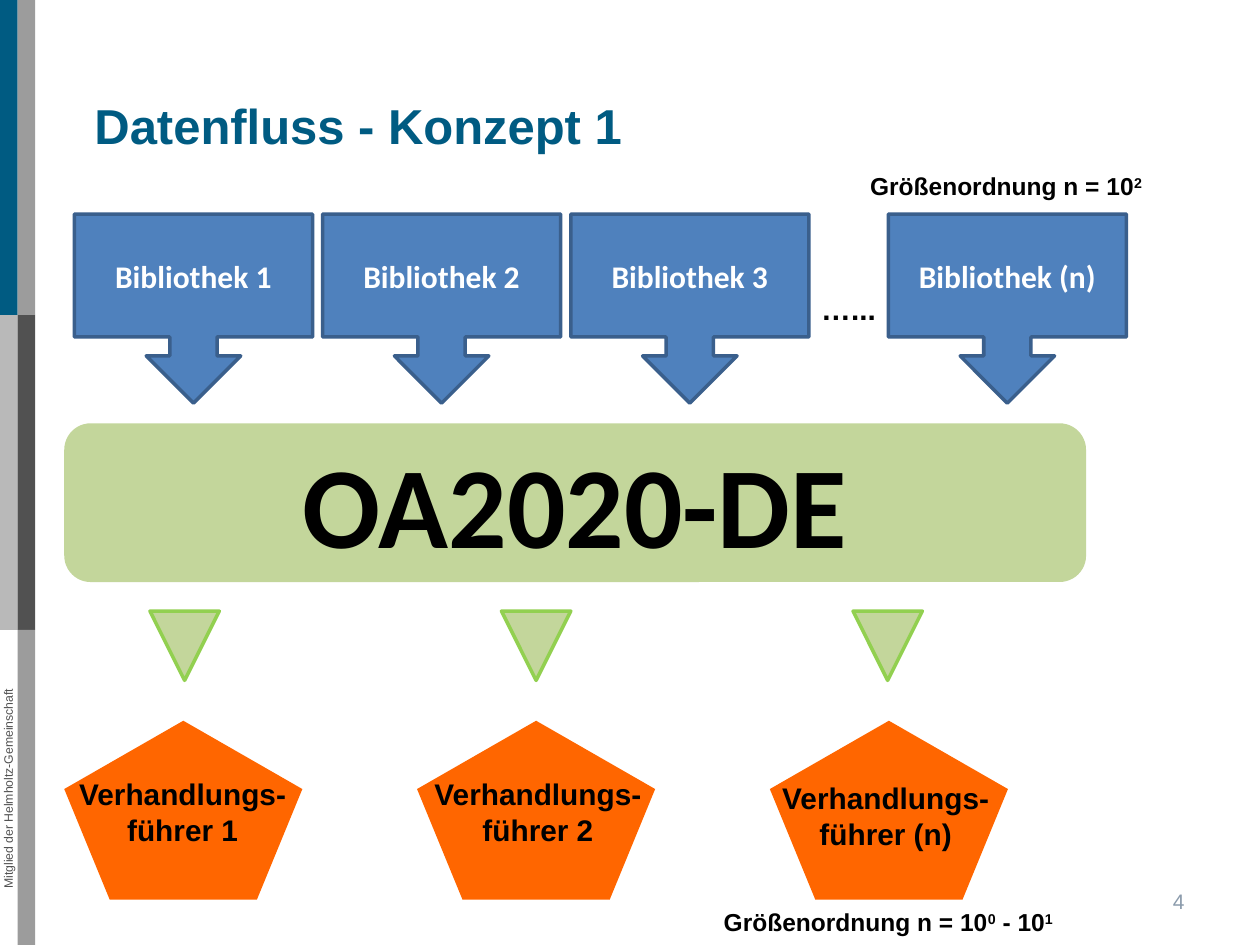
from pptx import Presentation
from pptx.dml.color import RGBColor
from pptx.enum.shapes import MSO_SHAPE as Shape
from pptx.enum.text import MSO_ANCHOR as Anchor, PP_ALIGN as Align
from pptx.util import Pt

PX = 9144
COLORS = {
    "blue": "005B82", "light": "B9B9B9", "dark": "515151", "gray": "9C9C9C",
    "number": "8B9BAC", "library": "4F81BD", "library_line": "3A5F8C",
    "green": "C3D69B", "green_line": "92D050", "orange": "FF6600",
    "black": "000000", "white": "FFFFFF",
}

presentation = Presentation()
presentation.slide_width = 1000 * PX
presentation.slide_height = 750 * PX
slide = presentation.slides.add_slide(presentation.slide_layouts[6])


def add_shape(kind, box, fill, line=None):
    shape = slide.shapes.add_shape(kind, *[value * PX for value in box])
    shape.shadow.inherit = False
    shape.fill.solid()
    shape.fill.fore_color.rgb = RGBColor.from_string(COLORS[fill])
    if line:
        shape.line.color.rgb = RGBColor.from_string(COLORS[line])
        shape.line.width = Pt(2)
    else:
        shape.line.fill.background()
    return shape


def write(target, text, size, color="black", font="Arial", bold=True,
          align=Align.CENTER, anchor=Anchor.TOP, margins=(0, 5)):
    if isinstance(target, tuple):
        target = slide.shapes.add_textbox(*[value * PX for value in target])
    frame = target.text_frame
    frame.word_wrap = True
    frame.vertical_anchor = anchor
    frame.margin_left = frame.margin_right = margins[0] * PX
    frame.margin_top = frame.margin_bottom = margins[1] * PX
    for index, line in enumerate(text.split("\n")):
        paragraph = frame.add_paragraph() if index else frame.paragraphs[0]
        paragraph.alignment = align
        paragraph.font.size = Pt(size)
        paragraph.font.name = font
        paragraph.font.bold = bold
        paragraph.font.color.rgb = RGBColor.from_string(COLORS[color])
        for position, part in enumerate(line.split("^")):
            run = paragraph.add_run()
            run.text = part
            if position % 2:
                run._r.get_or_add_rPr().set("baseline", "30000")
    return target


for column, row, color in [(0, 1, "light"), (1, 1, "dark"), (0, 0, "blue"),
                           (1, 0, "gray"), (1, 2, "gray")]:
    add_shape(Shape.RECTANGLE, (column * 14, row * 250, 14, 250), color)

membership = write((-118, 620, 249, 12), "Mitglied der Helmholtz-Gemeinschaft", 7,
                   "dark", bold=False, margins=(0, 0))
membership.rotation = 270
write((75, 76, 886, 63), "Datenfluss - Konzept 1", 28, "blue",
      align=Align.LEFT, margins=(0, 0))
write((717, 695, 233, 40), "4", 12, "number", bold=False,
      align=Align.RIGHT, anchor=Anchor.MIDDLE, margins=(10, 5))

hub = add_shape(Shape.ROUNDED_RECTANGLE, (51, 336, 811, 126), "green")
write(hub, "OA2020-DE", 66, font="Calibri", anchor=Anchor.MIDDLE, margins=(10, 5))

for left, label in [(59, "1"), (256, "2"), (453, "3"), (705, "(n)")]:
    library = add_shape(Shape.DOWN_ARROW_CALLOUT, (left, 170, 189, 150),
                        "library", "library_line")
    library.adjustments[3] = 0.65
    write(library, f"Bibliothek {label}", 18, "white", "Calibri",
          anchor=Anchor.MIDDLE, margins=(10, 5))

for index, (label, left, top) in enumerate([("1", 53, 611), ("2", 335, 611),
                                            ("(n)", 611, 614)]):
    add_shape(Shape.FLOWCHART_MERGE, (119 + index * 279, 485, 55, 55),
              "green", "green_line")
    add_shape(Shape.REGULAR_PENTAGON, (51 + index * 280, 572, 189, 142), "orange")
    write((left, top, 184, 67), f"Verhandlungs-\nführer {label}", 17)

write((642, 226, 63, 38), "…...", 17)
write((681, 131, 235, 33), "Größenordnung n = 10^2", 14)
write((561, 715, 288, 33), "Größenordnung n = 10^0^ - 10^1", 14)

presentation.save("out.pptx")
